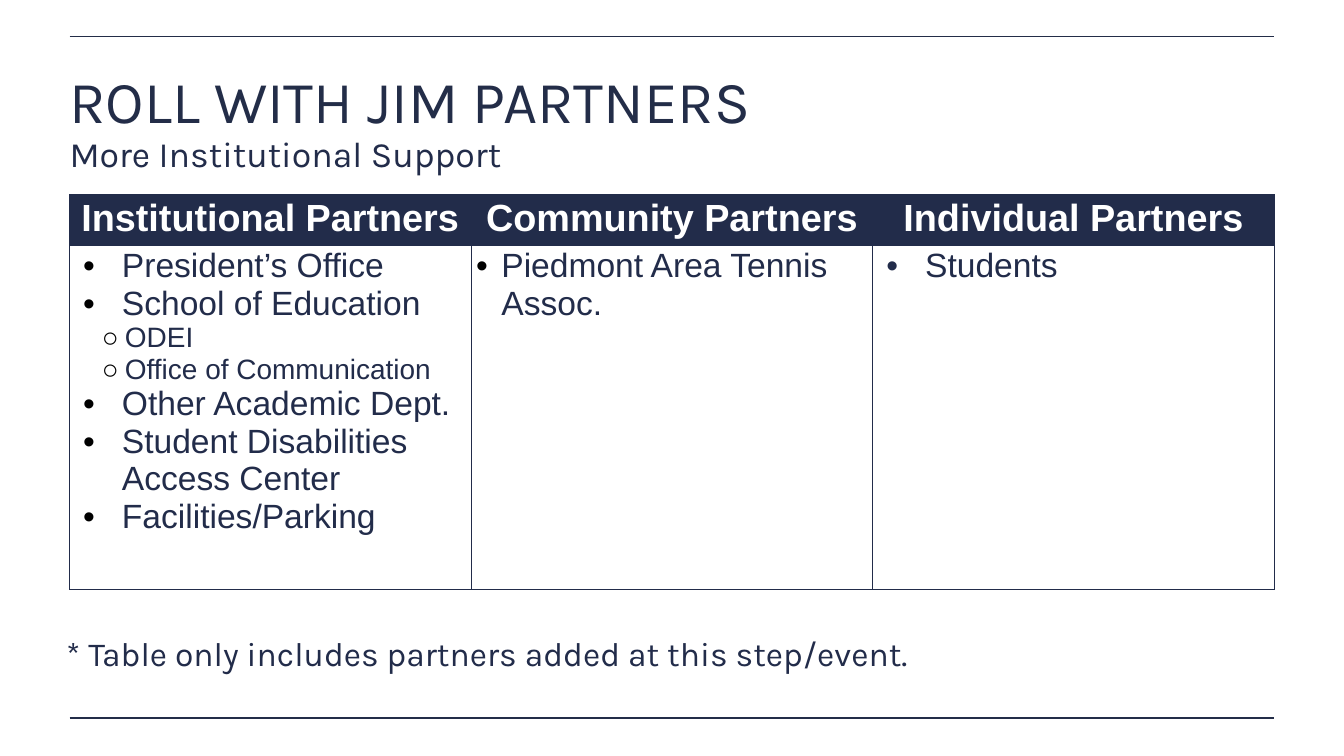
import pptx
import pptx.dml.color
import pptx.enum.shapes
import pptx.enum.text
import pptx.oxml.ns
import pptx.oxml.xmlchemy
import pptx.util
from lxml import etree

Inches = pptx.util.Inches
Pt = pptx.util.Pt
RGBColor = pptx.dml.color.RGBColor
qn = pptx.oxml.ns.qn
Align = pptx.enum.text.PP_ALIGN
Anchor = pptx.enum.text.MSO_ANCHOR

NAVY = RGBColor(0x22, 0x2C, 0x4A)
RULE_NAVY = RGBColor(0x23, 0x2D, 0x48)
WHITE = RGBColor(0xFF, 0xFF, 0xFF)
BLACK = RGBColor(0, 0, 0)

LEFT, RIGHT = 1.38, 25.29
COLUMN_WIDTH = 7.97
ROW_HEIGHTS = (0.87, 6.83)

MAIN = dict(size=48, margin=0.94, indent=-0.77)
SUB = dict(size=40, margin=1, indent=-0.46, bullet="○", level=1)
NARROW = dict(size=48, margin=0.5, indent=-0.5)

COLUMNS = [
    ("Institutional Partners", [
        ("President’s Office", MAIN),
        ("School of Education", MAIN),
        ("ODEI", SUB),
        ("Office of Communication", SUB),
        ("Other Academic Dept.", MAIN),
        ("Student Disabilities Access Center", MAIN),
        ("Facilities/Parking", MAIN),
    ]),
    ("Community Partners", [("Piedmont Area Tennis Assoc.", NARROW)]),
    ("Individual Partners", [("Students", dict(MAIN, bullet_color=NAVY))]),
]


def write(p, text, size=48, font="Arial", color=NAVY, bold=False,
          align=None, spacing=None):
    r = p.add_run()
    r.text = text
    r.font.size = Pt(size)
    r.font.name = font
    r.font.bold = bold
    r.font.color.rgb = color
    p.alignment = align
    p.line_spacing = spacing


class Deck:
    def __init__(self, prs):
        self.s = prs.slides.add_slide(prs.slide_layouts[6])
        self.font = "Karla"
        self.spacing = 0.8
        self.inset = Inches(0.06)

    def rule(self, y):
        sp = self.s.shapes.add_connector(
            pptx.enum.shapes.MSO_CONNECTOR.STRAIGHT,
            Inches(LEFT), Inches(y), Inches(RIGHT), Inches(y))
        sp.line.color.rgb = RULE_NAVY
        sp.line.width = Pt(2)
        etree.SubElement(sp._element.spPr, qn("a:effectLst"))

    def text(self, text, x, y, w, h, size, color=NAVY):
        sp = self.s.shapes.add_textbox(Inches(x), Inches(y), Inches(w), Inches(h))
        tf = sp.text_frame
        tf.word_wrap = True
        tf.vertical_anchor = Anchor.MIDDLE
        tf.margin_left = tf.margin_right = self.inset
        tf.margin_top = tf.margin_bottom = self.inset
        write(tf.paragraphs[0], text, size=size, font=self.font, color=color,
              spacing=self.spacing)

    def bullet(self, p, text, size, margin, indent, bullet="•", level=0,
               bullet_color=BLACK):
        p.level = level
        pPr = p._p.get_or_add_pPr()
        pPr.set("marL", str(Inches(margin)))
        pPr.set("indent", str(Inches(indent)))
        clr = etree.SubElement(pPr, qn("a:buClr"))
        etree.SubElement(clr, qn("a:srgbClr"), val=str(bullet_color))
        etree.SubElement(pPr, qn("a:buFont"), typeface="Arial")
        etree.SubElement(pPr, qn("a:buChar"), char=bullet)
        write(p, text, size=size)

    def cell_style(self, cell, fill):
        tcPr = cell._tc.get_or_add_tcPr()
        for side in ("lnL", "lnR", "lnT", "lnB"):
            ln = etree.SubElement(tcPr, qn("a:" + side), w=str(Pt(1)))
            solid = etree.SubElement(ln, qn("a:solidFill"))
            etree.SubElement(solid, qn("a:srgbClr"), val=str(NAVY))
        if fill is None:
            cell.fill.background()
        else:
            cell.fill.solid()
            cell.fill.fore_color.rgb = fill

    def table(self, columns, x, y):
        table = self.s.shapes.add_table(
            len(ROW_HEIGHTS), len(columns), Inches(x), Inches(y),
            Inches(COLUMN_WIDTH * len(columns)), Inches(sum(ROW_HEIGHTS))).table
        for row, height in zip(table.rows, ROW_HEIGHTS):
            row.height = Inches(height)
        for i, (heading, items) in enumerate(columns):
            table.columns[i].width = Inches(COLUMN_WIDTH)
            head, body = table.cell(0, i), table.cell(1, i)
            self.cell_style(head, NAVY)
            self.cell_style(body, None)
            write(head.text_frame.paragraphs[0], heading, size=54, color=WHITE,
                  bold=True, align=Align.CENTER)
            tf = body.text_frame
            for j, (text, style) in enumerate(items):
                p = tf.add_paragraph() if j else tf.paragraphs[0]
                self.bullet(p, text, **style)


def main():
    prs = pptx.Presentation()
    prs.slide_width = Inches(26.67)
    prs.slide_height = Inches(15)
    deck = Deck(prs)
    for y in (0.72, 14.25):
        deck.rule(y)
    deck.text("ROLL WITH JIM PARTNERS", 1.32, 1.29, 23.91, 1.65, 85, RULE_NAVY)
    deck.text("More Institutional Support", 1.32, 2.68, 24.03, 0.87, 50.9)
    deck.table(COLUMNS, LEFT, 3.86)
    deck.text("* Table only includes partners added at this step/event.",
              1.26, 12.6, 24.03, 0.87, 48)
    prs.save("out.pptx")


if __name__ == "__main__":
    main()
